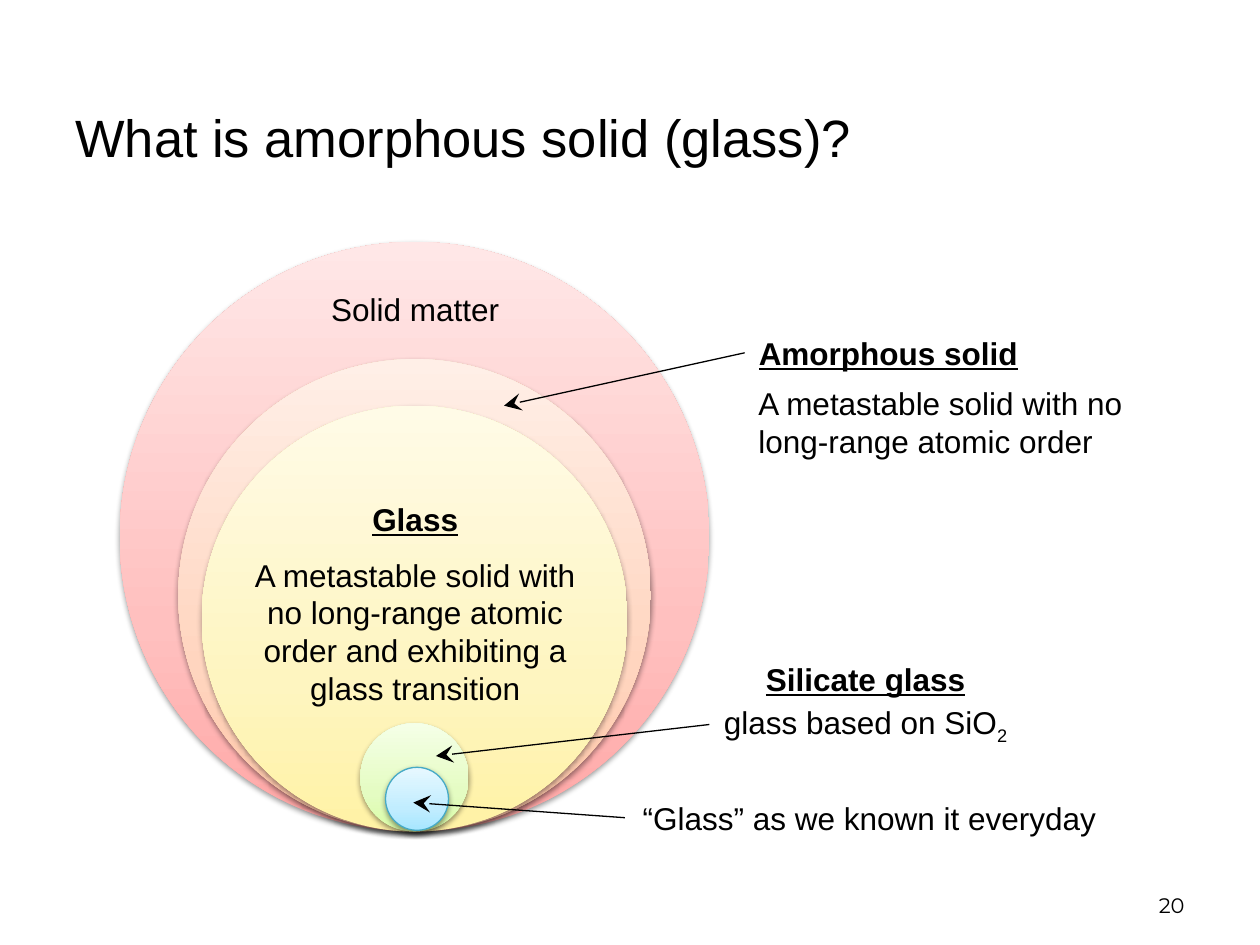
"""Builds a slide of nested circles that defines amorphous solids and glass."""
import pptx
import pptx.dml.color
import pptx.enum.shapes
import pptx.enum.text
import pptx.oxml
import pptx.oxml.ns
import pptx.util

Inches = pptx.util.Inches
Pt = pptx.util.Pt
qn = pptx.oxml.ns.qn
ALIGN = pptx.enum.text.PP_ALIGN
ANCHOR = pptx.enum.text.MSO_ANCHOR
NS = pptx.oxml.ns.nsdecls("a")

COLORS = {
    "text": "000000",
    "everyday_line": "46AAC5",
}
GRADIENTS = {
    "solid": ("FFA6A5", "FFC0BF", "FFE7E7"),
    "amorphous": ("FFC5A5", "FFD5BF", "FFEFE7"),
    "glass": ("FFF2A5", "FEF5C0", "FFFBE7"),
    "silicate": ("DAFDA7", "E4FCC2", "F5FFE7"),
    "everyday": ("A7E6FF", "C1EDFF", "E7F8FF"),
}
STOPS = (0, 35, 100)
CENTER_X, BOTTOM = 3.29, 6.6


def rgb(name):
    return pptx.dml.color.RGBColor.from_string(COLORS[name])


def add_circle(slide, name, size, center_x=CENTER_X, bottom=BOTTOM, line=None):
    sp = slide.shapes.add_shape(
        pptx.enum.shapes.MSO_SHAPE.OVAL,
        Inches(center_x - size / 2), Inches(bottom - size), Inches(size), Inches(size))
    sp.fill.gradient()
    stops = "".join(
        f'<a:gs pos="{pos * 1000}"><a:srgbClr val="{color}"/></a:gs>'
        for pos, color in zip(STOPS, GRADIENTS[name]))
    sp_pr = sp.element.spPr
    sp_pr.replace(sp_pr.find(qn("a:gradFill")), pptx.oxml.parse_xml(
        f'<a:gradFill {NS} rotWithShape="1"><a:gsLst>{stops}</a:gsLst>'
        '<a:lin ang="16200000" scaled="0"/></a:gradFill>'))
    if line:
        sp.line.color.rgb = rgb(line)
        sp.line.width = Pt(0.75)
    else:
        sp.line.fill.background()
    sp.shadow.inherit = False
    sp_pr.find(qn("a:effectLst")).append(pptx.oxml.parse_xml(
        f'<a:outerShdw {NS} blurRad="{Pt(3.1)}" dist="{Pt(1.6)}" dir="5400000" rotWithShape="0">'
        '<a:srgbClr val="000000"><a:alpha val="38000"/></a:srgbClr></a:outerShdw>'))
    return sp


def format_run(r, size=18, font="Arial", heading=False):
    r.font.size = Pt(size)
    r.font.name = font
    r.font.color.rgb = rgb("text")
    r.font.bold = heading
    r.font.underline = heading


def add_text(slide, box, text, size=18, font="Arial", heading=False,
             align=ALIGN.CENTER, anchor=ANCHOR.TOP, wrap=False, grow=True):
    sp = slide.shapes.add_textbox(*map(Inches, box))
    tf = sp.text_frame
    tf.word_wrap = wrap
    if grow:
        tf.auto_size = pptx.enum.text.MSO_AUTO_SIZE.SHAPE_TO_FIT_TEXT
    tf.vertical_anchor = anchor
    tf.text = text
    for p in tf.paragraphs:
        p.alignment = align
        for r in p.runs:
            format_run(r, size, font, heading)
    return sp


def add_silicate_label(slide):
    sp = add_text(slide, (5.63, 5.19, 2.48, 0.75), "Silicate glass", heading=True)
    tf = sp.text_frame
    tf.paragraphs[0].space_after = Pt(3)
    p = tf.add_paragraph()
    p.alignment = ALIGN.CENTER
    for text in ("glass based on SiO", "2"):
        r = p.add_run()
        r.text = text
        format_run(r)
    r.font._element.set("baseline", "-25000")


def add_arrow(slide, start, end, label=None):
    line = slide.shapes.add_connector(
        pptx.enum.shapes.MSO_CONNECTOR.STRAIGHT, *map(Inches, start + end))
    if label is not None:
        line.begin_connect(label, 1)
    line.line.color.rgb = rgb("text")
    line.line.width = Pt(0.75)
    line.line._get_or_add_ln().append(
        pptx.oxml.parse_xml(f'<a:tailEnd {NS} type="stealth" w="lg" len="lg"/>'))
    line._element.spPr.append(pptx.oxml.parse_xml(f"<a:effectLst {NS}/>"))


def main():
    prs = pptx.Presentation()
    prs.slide_width, prs.slide_height = Inches(10), Inches(7.5)
    slide = prs.slides.add_slide(prs.slide_layouts[6])

    add_text(slide, (0.5, 0.5, 9, 1.17), "What is amorphous solid (glass)?", size=30,
             align=ALIGN.LEFT, anchor=ANCHOR.MIDDLE, wrap=True, grow=False)
    add_text(slide, (7.17, 6.83, 2.33, 0.5), "20", size=12, font="Montserrat",
             align=ALIGN.RIGHT, anchor=ANCHOR.BOTTOM, wrap=True, grow=False)

    for name, size in (("solid", 4.68), ("amorphous", 3.75), ("glass", 3.38)):
        add_circle(slide, name, size)

    add_text(slide, (2.52, 2.25, 1.55, 0.4), "Solid matter")
    amorphous = add_text(slide, (5.91, 2.6, 2.28, 0.4), "Amorphous solid", heading=True)
    add_arrow(slide, (5.91, 2.81), (4, 3.22), amorphous)
    add_text(slide, (2.85, 3.92, 0.89, 0.4), "Glass", heading=True)
    add_text(slide, (5.92, 3, 3.26, 0.71),
             "A metastable solid with no long-range atomic order",
             align=ALIGN.LEFT, wrap=True)
    add_text(slide, (1.86, 4.36, 2.87, 1.31),
             "A metastable solid with no long-range atomic order "
             "and exhibiting a glass transition", wrap=True)

    add_circle(slide, "silicate", 0.86)
    add_silicate_label(slide)
    add_arrow(slide, (5.63, 5.75), (3.46, 6))

    add_circle(slide, "everyday", 0.5, center_x=3.31, bottom=6.59, line="everyday_line")
    everyday = add_text(slide, (4.96, 6.29, 3.88, 0.4),
                        "“Glass” as we known it everyday", wrap=True)
    add_arrow(slide, (4.98, 6.49), (3.28, 6.37), everyday)

    prs.save("out.pptx")


if __name__ == "__main__":
    main()
